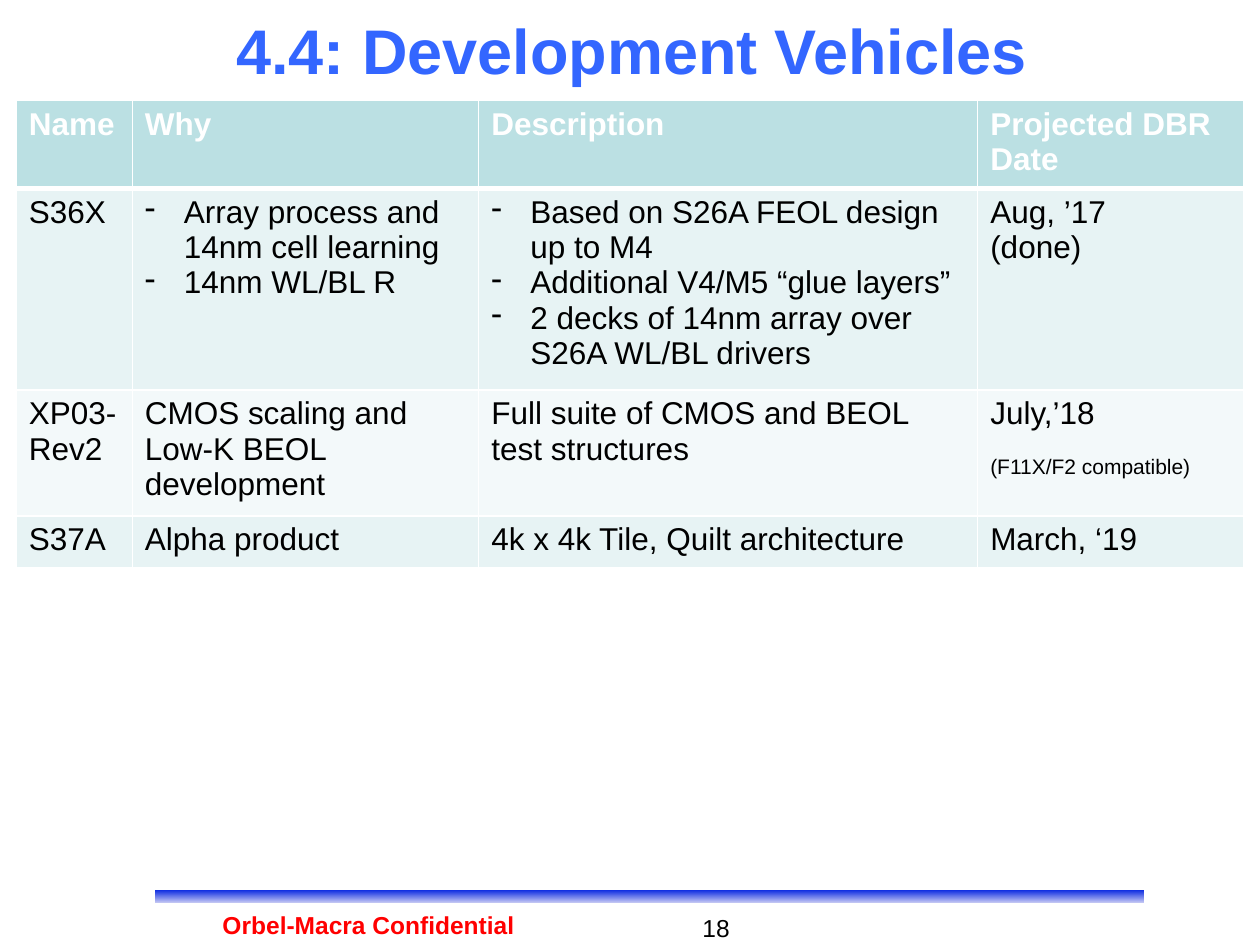
from lxml.etree import SubElement
from pptx import Presentation
from pptx.dml.color import RGBColor
from pptx.enum.shapes import MSO_SHAPE as SHAPE
from pptx.enum.text import MSO_ANCHOR as ANCHOR, PP_ALIGN as ALIGN
from pptx.oxml import parse_xml
from pptx.oxml.ns import nsdecls, qn
from pptx.util import Inches, Pt

W, H = Inches(10), Inches(7.5)
FONT = "Arial"
BLACK = RGBColor(0, 0, 0)
WHITE = RGBColor(255, 255, 255)
RED = RGBColor(255, 0, 0)
TITLE_BLUE = RGBColor(0x33, 0x66, 0xFF)
BAR_TOP = RGBColor(0x00, 0x20, 0xE0)
BAR_BOTTOM = RGBColor(0xDA, 0xDA, 0xF6)
HEADER_FILL = RGBColor(0xBB, 0xE0, 0xE3)
BAND_FILLS = RGBColor(0xE7, 0xF3, 0xF4), RGBColor(0xF3, 0xF9, 0xFA)

COL_SHARES = 9.2, 27.5, 39.6, 21.1
ROW_SHARES = 8.8, 20, 12.5, 5.5
HEADER = "Name", "Why", "Description", "Projected DBR Date"
VEHICLES = (
    ("S36X",
     ("- Array process and 14nm cell learning", "- 14nm WL/BL R"),
     ("- Based on S26A FEOL design up to M4",
      "- Additional V4/M5 “glue layers”",
      "- 2 decks of 14nm array over S26A WL/BL drivers"),
     ("Aug, ’17", "(done)")),
    ("XP03-Rev2", "CMOS scaling and Low-K BEOL development",
     "Full suite of CMOS and BEOL test structures", "July,’18"),
    ("S37A", "Alpha product", "4k x 4k Tile, Quilt architecture", "March, ‘19"),
)


def across(share):
    """Return a percentage of the slide width."""
    return int(W * share / 100)


def down(share):
    """Return a percentage of the slide height."""
    return int(H * share / 100)


def place(x, y, w, h):
    """Return a box given in percentages of the slide."""
    return across(x), down(y), across(w), down(h)


def write(p, text, size=18, color=BLACK, bold=False, align=ALIGN.LEFT, before=0):
    """Write one formatted paragraph, with a hanging dash if text starts with one."""
    p.alignment = align
    if before:
        p.space_before = Pt(before)
    if text.startswith("- "):
        text = text[2:]
        pPr = p._p.get_or_add_pPr()
        pPr.set("marL", str(Inches(0.31)))
        pPr.set("indent", str(-Inches(0.31)))
        SubElement(pPr, qn("a:buChar"), char="-")
    r = p.add_run()
    r.text = text
    r.font.name, r.font.size = FONT, Pt(size)
    r.font.bold, r.font.color.rgb = bold, color


def add_text(s, box, text, anchor=ANCHOR.TOP, **fmt):
    """Add a wrapped text box with one paragraph."""
    tf = s.shapes.add_textbox(*place(*box)).text_frame
    tf.word_wrap = True
    tf.vertical_anchor = anchor
    write(tf.paragraphs[0], text, **fmt)


def add_bar(s, box):
    """Add the gradient bar above the footer."""
    sp = s.shapes.add_shape(SHAPE.RECTANGLE, *place(*box))
    sp.shadow.inherit = False
    sp.fill.gradient()
    sp.fill.gradient_angle = 270
    for stop, color in zip(sp.fill.gradient_stops, (BAR_TOP, BAR_BOTTOM)):
        stop.color.rgb = color
    sp.line.color.rgb, sp.line.width = WHITE, Pt(1)


def set_borders(cell, top, bottom):
    """Draw white borders round a cell, with top and bottom widths in points."""
    tcPr = cell._tc.get_or_add_tcPr()
    for i, (side, width) in enumerate(zip("LRTB", (1, 1, top, bottom))):
        tcPr.insert(i, parse_xml(
            f'<a:ln{side} {nsdecls("a")} w="{Pt(width)}"><a:solidFill>'
            f'<a:srgbClr val="{WHITE}"/></a:solidFill></a:ln{side}>'))


def fill_cell(cell, lines, fill, top=1, bottom=1, **fmt):
    """Fill a cell with one or several paragraphs."""
    cell.fill.solid()
    cell.fill.fore_color.rgb = fill
    set_borders(cell, top, bottom)
    tf = cell.text_frame
    for i, line in enumerate([lines] if isinstance(lines, str) else lines):
        write(tf.add_paragraph() if i else tf.paragraphs[0], line, **fmt)


def add_vehicle_table(s, x, y):
    """Add the table of development vehicles."""
    box = place(x, y, sum(COL_SHARES), sum(ROW_SHARES))
    table = s.shapes.add_table(len(ROW_SHARES), len(COL_SHARES), *box).table
    for col, share in zip(table.columns, COL_SHARES):
        col.width = across(share)
    for row, share in zip(table.rows, ROW_SHARES):
        row.height = down(share)
    for c, text in enumerate(HEADER):
        fill_cell(table.cell(0, c), text, HEADER_FILL, bottom=3, color=WHITE, bold=True)
    for r, vehicle in enumerate(VEHICLES, 1):
        for c, lines in enumerate(vehicle):
            fill_cell(table.cell(r, c), lines, BAND_FILLS[(r - 1) % 2],
                      top=3 if r == 1 else 1)
    note = table.cell(2, 3).text_frame.add_paragraph()
    write(note, "(F11X/F2 compatible)", size=12, before=13.5)


def main():
    """Build and save the slide."""
    prs = Presentation()
    prs.slide_width, prs.slide_height = W, H
    s = prs.slides.add_slide(prs.slide_layouts[6])
    add_bar(s, (12.2, 94.1, 78.7, 1.6))
    add_text(s, (5, 1.1, 91.7, 8.3), "4.4: Development Vehicles ", anchor=ANCHOR.MIDDLE,
             size=36, color=TITLE_BLUE, bold=True, align=ALIGN.CENTER)
    add_text(s, (47.5, 96, 11.4, 3.6), "18", size=14, align=ALIGN.RIGHT)
    add_text(s, (13.3, 95.6, 31.9, 3.5), "Orbel-Macra Confidential",
             size=14, color=RED, bold=True, align=ALIGN.CENTER)
    add_vehicle_table(s, 1.3, 10.6)
    prs.save("out.pptx")


if __name__ == "__main__":
    main()
